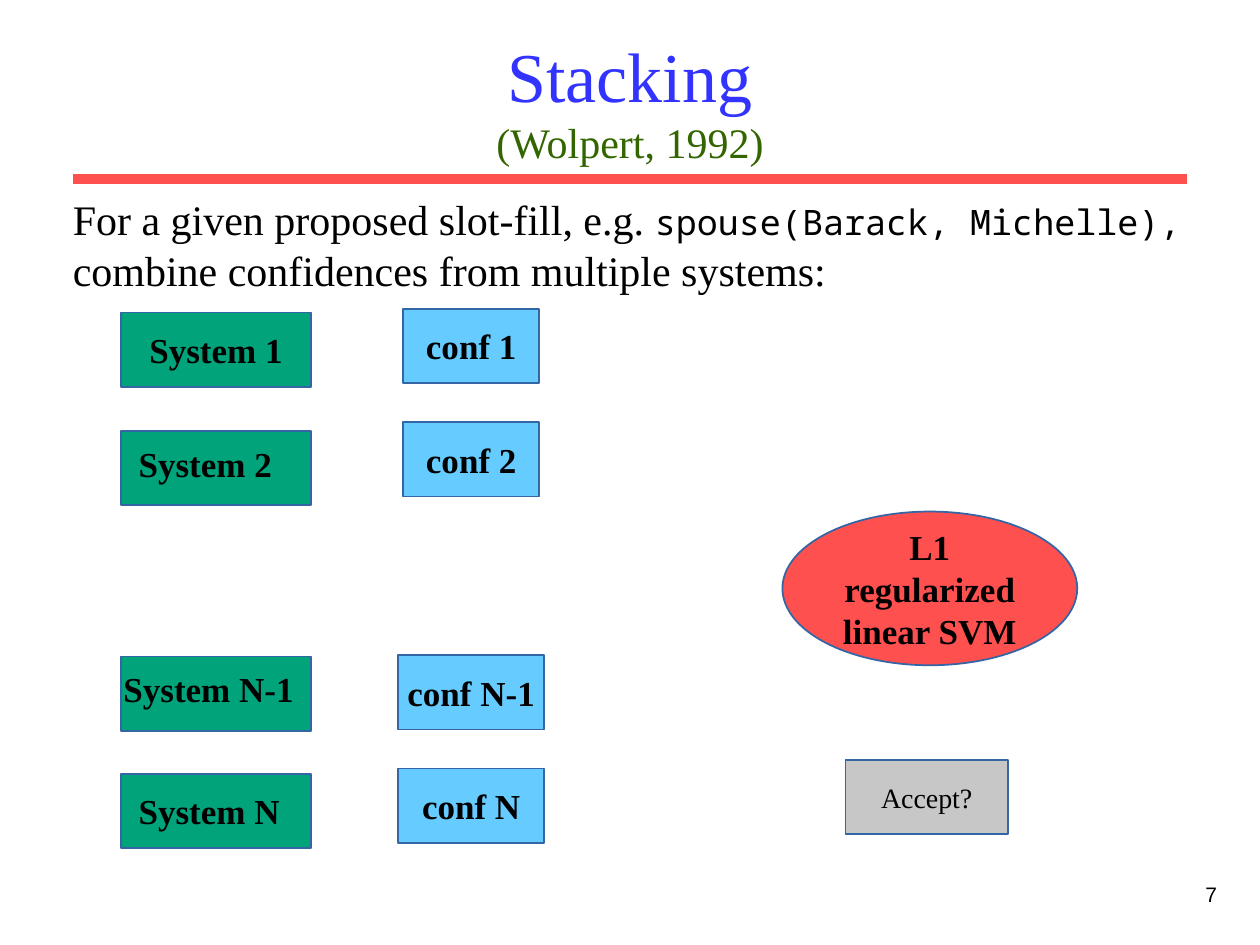
from pptx import Presentation
from pptx.dml.color import RGBColor
from pptx.enum.shapes import MSO_CONNECTOR, MSO_SHAPE
from pptx.enum.text import MSO_ANCHOR as Anchor, MSO_AUTO_SIZE as AutoSize, PP_ALIGN as Align
from pptx.oxml.ns import qn
from pptx.util import Inches, Pt
from lxml.etree import SubElement

BLACK = RGBColor(0x00, 0x00, 0x00)
BLUE = RGBColor(0x33, 0x33, 0xFF)
OLIVE = RGBColor(0x33, 0x66, 0x00)
RED = RGBColor(0xFF, 0x50, 0x50)
GREEN = RGBColor(0x00, 0xA3, 0x7A)
SKY = RGBColor(0x66, 0xCC, 0xFF)
GREY = RGBColor(0xC7, 0xC7, 0xC7)
OUTLINE = RGBColor(0x34, 0x65, 0xA4)
SERIF, MONO, SANS = "Times New Roman", "Noto Sans Mono", "Arial"

TITLE = {"size": Pt(40), "name": SERIF, "color": BLUE}
CITATION = {"size": Pt(24), "name": SERIF, "color": OLIVE}
BODY = {"size": Pt(24), "name": SERIF, "color": BLACK}
CODE = {"size": Pt(20), "name": MONO, "color": BLACK}
LABEL = {"size": Pt(20), "name": SERIF, "color": BLACK, "bold": True}
VERDICT = {"size": Pt(16), "name": SERIF, "color": BLACK}
NUMBER = {"size": Pt(12), "name": SANS, "color": BLACK}

INTRO = [
    [("For a given proposed slot-fill, e.g. ", BODY), ("spouse(Barack, Michelle),", CODE)],
    [("combine confidences from multiple systems:", BODY)],
]
BOX_HEIGHT = 0.59
SYSTEM_LEFT, SYSTEM_WIDTH = 0.96, 1.51
SYSTEM_TOPS = [2.48, 3.42, 5.21, 6.14]
TAG_HEIGHT, TAG_DROP = 0.41, 0.09
SYSTEM_TAGS = [
    ("System 2", 1.10, 1.17, Anchor.TOP),
    ("System N-1", 0.98, 1.47, Anchor.TOP),
    ("System N", 1.10, 1.23, Anchor.MIDDLE),
]
CONF_CENTER = 3.74
CONFIDENCES = [
    ("conf 1", 2.45, 1.08),
    ("conf 2", 3.35, 1.08),
    ("conf N-1", 5.20, 1.16),
    ("conf N", 6.10, 1.16),
]


def style(font, look):
    for key, value in look.items():
        if key == "color":
            font.color.rgb = value
        else:
            setattr(font, key, value)


def write(paragraph, text, look):
    run = paragraph.add_run()
    run.text = text
    style(run.font, look)


def set_frame(frame, anchor=Anchor.MIDDLE, wrap=True, inset=0):
    layout = {"vertical_anchor": anchor, "word_wrap": wrap, "auto_size": AutoSize.NONE}
    for side in ("left", "top", "right", "bottom"):
        layout[f"margin_{side}"] = Inches(inset)
    for key, value in layout.items():
        setattr(frame, key, value)


def add_box(slide, kind, place, fill, text="", look=LABEL, outlined=True,
            align=Align.CENTER, anchor=Anchor.MIDDLE, wrap=True):
    box = slide.shapes.add_shape(kind, *map(Inches, place))
    box.shadow.inherit = False
    box.fill.solid()
    box.fill.fore_color.rgb = fill
    if outlined:
        box.line.color.rgb = OUTLINE
        box.line.width = Pt(1)
    else:
        box.line.fill.background()
    set_frame(box.text_frame, anchor, wrap)
    if text:
        paragraph = box.text_frame.paragraphs[0]
        paragraph.alignment = align
        write(paragraph, text, look)


def add_header(slide):
    rule = slide.shapes.add_connector(
        MSO_CONNECTOR.STRAIGHT, Inches(0.58), Inches(1.42), Inches(9.42), Inches(1.42))
    rule.line.color.rgb = RED
    rule.line.width = Pt(6)
    SubElement(rule._element.spPr, qn("a:effectLst"))

    title = slide.shapes.title
    title.left, title.top, title.width, title.height = map(Inches, (0.75, 0.25, 8.5, 1.08))
    set_frame(title.text_frame)
    heading = title.text_frame.paragraphs[0]
    heading.alignment = Align.CENTER
    write(heading, "Stacking", TITLE)
    heading.add_line_break()
    write(heading, "(Wolpert, 1992)", CITATION)

    number = slide.shapes.add_textbox(*map(Inches, (7.58, 7, 2.08, 0.5))).text_frame
    set_frame(number, Anchor.TOP)
    number.paragraphs[0].alignment = Align.RIGHT
    write(number.paragraphs[0], "7", NUMBER)


def add_intro(slide):
    intro = slide.shapes.add_textbox(*map(Inches, (0.48, 1.49, 9.07, 0.91))).text_frame
    set_frame(intro, Anchor.TOP)
    intro.margin_left = intro.margin_right = Inches(0.1)
    intro.margin_top = intro.margin_bottom = Inches(0.05)
    for index, parts in enumerate(INTRO):
        paragraph = intro.add_paragraph() if index else intro.paragraphs[0]
        for text, look in parts:
            write(paragraph, text, look)


def add_diagram(slide):
    rect = MSO_SHAPE.RECTANGLE
    for index, top in enumerate(SYSTEM_TOPS):
        add_box(slide, rect, (SYSTEM_LEFT, top, SYSTEM_WIDTH, BOX_HEIGHT), GREEN,
                "" if index else "System 1")
    for (text, left, width, anchor), top in zip(SYSTEM_TAGS, SYSTEM_TOPS[1:]):
        add_box(slide, rect, (left, top + TAG_DROP, width, TAG_HEIGHT), GREEN, text,
                outlined=False, align=Align.LEFT, anchor=anchor, wrap=False)
    add_box(slide, MSO_SHAPE.OVAL, (6.21, 4.06, 2.34, 1.22), RED, "L1 regularized linear SVM")
    add_box(slide, rect, (6.71, 6.03, 1.29, BOX_HEIGHT), GREY, "Accept?", VERDICT)
    for text, top, width in CONFIDENCES:
        add_box(slide, rect, (CONF_CENTER - width / 2, top, width, BOX_HEIGHT), SKY, text)


def main():
    deck = Presentation()
    deck.slide_width, deck.slide_height = Inches(10), Inches(7.5)
    slide = deck.slides.add_slide(deck.slide_layouts[5])
    add_header(slide)
    add_diagram(slide)
    add_intro(slide)
    deck.save("out.pptx")


if __name__ == "__main__":
    main()
